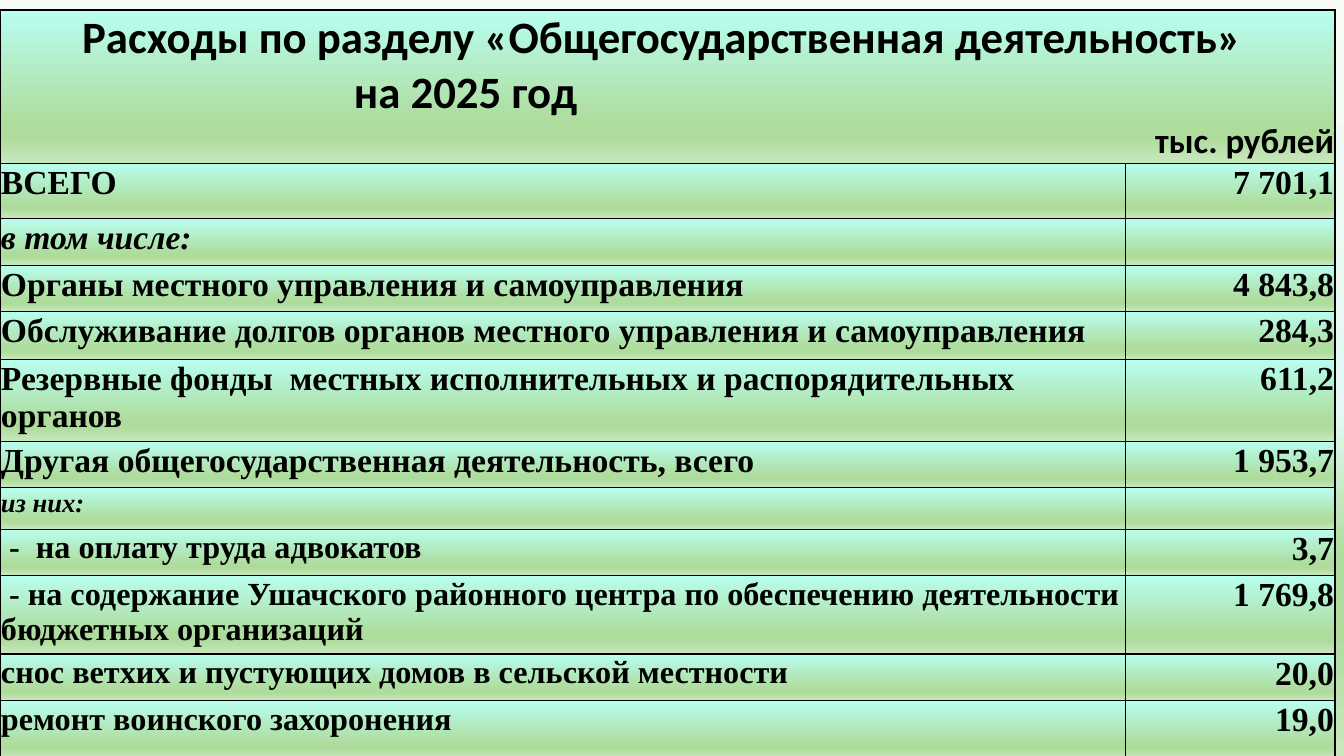
from dataclasses import dataclass

from lxml.etree import SubElement
from pptx import Presentation
from pptx.dml.color import RGBColor
from pptx.enum.text import PP_ALIGN
from pptx.oxml import parse_xml
from pptx.oxml.ns import nsdecls, qn
from pptx.util import Inches, Pt


@dataclass(frozen=True)
class Theme:
    """Colours, fonts and type sizes of the slide."""
    ink: str = "000000"
    page_stops: tuple = ((0, "F6FBF4"), (55, "E2F9F3"), (74, "AEDC9D"), (83, "AEDC9D"), (100, "C9E8BE"))
    cell_stops: tuple = ((0, "B8FEEF"), (74, "AEDC9D"), (83, "AEDC9D"), (100, "C9E8BE"))
    title_font: str = "Calibri"
    body_font: str = "Times New Roman"
    title: int = 32
    unit: int = 25
    body: int = 24
    detail: int = 23
    note: int = 19


THEME = Theme()
COLUMN_WIDTHS = (11.16, 2.08)
TITLE_HEIGHT = 1.5
EXPENSES = (
    ("ВСЕГО", "7 701,1", 0.55, THEME.body, False),
    ("в том числе:", "", 0.46, THEME.body, True),
    ("Органы местного управления и самоуправления", "4 843,8", 0.46, THEME.body, False),
    ("Обслуживание долгов органов местного управления и самоуправления", "284,3", 0.48, THEME.body, False),
    ("Резервные фонды  местных исполнительных и распорядительных органов", "611,2", 0.81, THEME.body, False),
    ("Другая общегосударственная деятельность, всего", "1 953,7", 0.46, THEME.body, False),
    ("из них:", "", 0.41, THEME.note, True),
    (" -  на оплату труда адвокатов", "3,7", 0.46, THEME.detail, False),
    (" - на содержание Ушачского районного центра по обеспечению деятельности бюджетных организаций",
     "1 769,8", 0.78, THEME.detail, False),
    ("снос ветхих и пустующих домов в сельской местности", "20,0", 0.46, THEME.detail, False),
    ("ремонт воинского захоронения", "19,0", 0.58, THEME.detail, False),
)


def paint_gradient(fill, element, stops):
    """Fill an element with a top-to-bottom gradient."""
    fill.gradient()
    fill.gradient_angle = 270
    stop_list = next(element.iter(qn("a:gsLst")))
    for old_stop in list(stop_list):
        stop_list.remove(old_stop)
    for percent, color in stops:
        stop = SubElement(stop_list, qn("a:gs"), pos=str(percent * 1000))
        SubElement(stop, qn("a:srgbClr"), val=color)


def style_cell(cell):
    """Give a cell its margins, gradient and thin borders."""
    cell.margin_left = cell.margin_right = cell.margin_top = Inches(0.01)
    cell.margin_bottom = 0
    properties = cell._tc.get_or_add_tcPr()
    paint_gradient(cell.fill, properties, THEME.cell_stops)
    for position, side in enumerate(("lnL", "lnR", "lnT", "lnB")):
        properties.insert(position, parse_xml(
            f'<a:{side} {nsdecls("a")} w="{Pt(1)}"><a:solidFill>'
            f'<a:srgbClr val="{THEME.ink}"/></a:solidFill></a:{side}>'))


def write_text(para, text, size, font=THEME.body_font, align=PP_ALIGN.LEFT, italic=False, indent=0):
    """Write one bold formatted paragraph."""
    para.alignment = align
    if indent:
        para._p.get_or_add_pPr().set("marL", str(Inches(indent)))
    span = para.add_run()
    span.text = text
    span.font.name = font
    span.font.size = Pt(size)
    span.font.bold = True
    span.font.italic = italic
    span.font.color.rgb = RGBColor.from_string(THEME.ink)


def write_title(cell):
    """Write the heading and the unit of measure."""
    frame = cell.text_frame
    write_text(frame.paragraphs[0], "Расходы по разделу «Общегосударственная деятельность» ",
               THEME.title, font=THEME.title_font, align=PP_ALIGN.CENTER)
    write_text(frame.add_paragraph(), "на 2025 год", THEME.title, font=THEME.title_font, indent=3.5)
    write_text(frame.add_paragraph(), "тыс. рублей", THEME.unit, font=THEME.title_font, align=PP_ALIGN.RIGHT)


def add_expense_table(page):
    """Add the table of expenses under its merged heading."""
    heights = [TITLE_HEIGHT] + [expense[2] for expense in EXPENSES]
    table = page.shapes.add_table(len(heights), len(COLUMN_WIDTHS), Inches(0), Inches(0.1),
                                  Inches(sum(COLUMN_WIDTHS)), Inches(sum(heights))).table
    table.first_row = table.horz_banding = False
    for column, width in zip(table.columns, COLUMN_WIDTHS):
        column.width = Inches(width)
    for row, height in zip(table.rows, heights):
        row.height = Inches(height)
    for cell in table.iter_cells():
        style_cell(cell)
    table.cell(0, 0).merge(table.cell(0, 1))
    write_title(table.cell(0, 0))
    for index, (label, amount, _, size, italic) in enumerate(EXPENSES, start=1):
        write_text(table.cell(index, 0).text_frame.paragraphs[0], label, size, italic=italic)
        if amount:
            write_text(table.cell(index, 1).text_frame.paragraphs[0], amount, THEME.body, align=PP_ALIGN.RIGHT)


def main():
    """Build and save the deck."""
    deck = Presentation()
    deck.slide_width, deck.slide_height = Inches(13.33), Inches(7.5)
    page = deck.slides.add_slide(deck.slide_layouts[6])
    paint_gradient(page.background.fill, page.element, THEME.page_stops)
    add_expense_table(page)
    deck.save("out.pptx")


if __name__ == "__main__":
    main()
